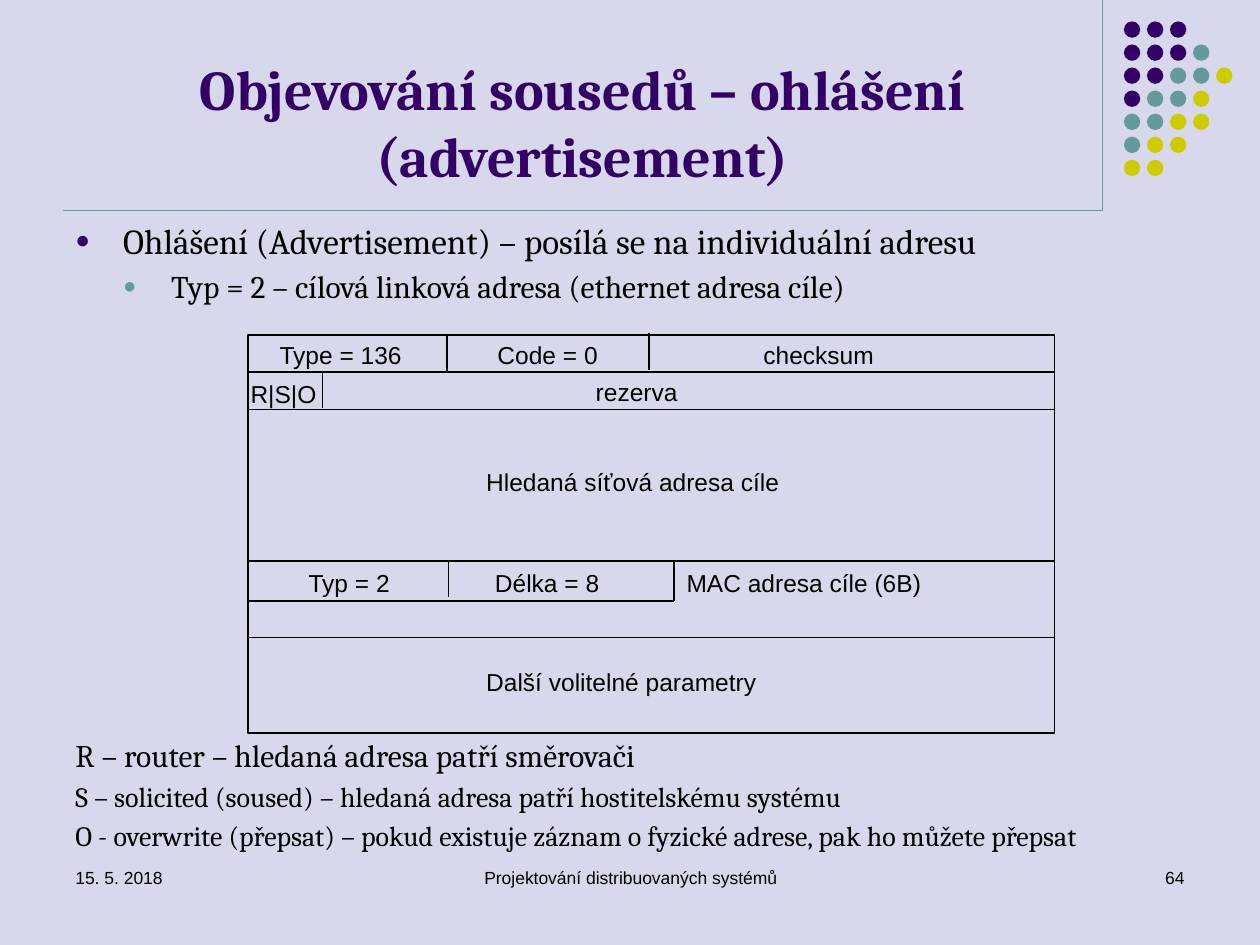
from typing import NamedTuple

from lxml.etree import SubElement
from pptx import Presentation
from pptx.dml.color import RGBColor
from pptx.enum.shapes import MSO_CONNECTOR, MSO_SHAPE
from pptx.enum.text import MSO_ANCHOR, PP_ALIGN
from pptx.oxml.ns import qn
from pptx.util import Inches, Pt

PURPLE, TEAL, YELLOW = "330066", "669999", "CCCC00"
BLACK, BACKGROUND = "000000", "D8D8EC"
LEFT, RIGHT, TOP, BOTTOM = 1.97, 8.37, 2.66, 5.82
DOT_ROWS = ("PPP", "PPPT", "PPTTY", "PTTY", "TTYY", "TYY", "YY")
DOT_COLORS = {"P": PURPLE, "T": TEAL, "Y": YELLOW}


class Para(NamedTuple):
    text: str
    size: int
    bullet: str = ""
    indent: float = 0


class Rule(NamedTuple):
    x1: float
    y1: float
    x2: float
    y2: float


class Field(NamedTuple):
    text: str
    x: float
    y: float
    w: float
    h: float


RULES = (
    Rule(LEFT, 2.95, RIGHT, 2.95),
    Rule(LEFT, 3.25, RIGHT, 3.25),
    Rule(LEFT, 4.45, RIGHT, 4.45),
    Rule(LEFT, 4.77, 5.35, 4.77),
    Rule(LEFT, 5.06, RIGHT, 5.06),
    Rule(3.55, TOP, 3.55, 2.96),
    Rule(5.15, 2.64, 5.15, 2.94),
    Rule(2.56, 2.95, 2.56, 3.24),
    Rule(3.56, 4.45, 3.56, 4.74),
    Rule(5.35, 4.45, 5.35, 4.77),
)
FIELDS = (
    Field("Type = 136", 2.12, 2.63, 1.41, 0.36),
    Field("Code = 0", 3.85, 2.63, 1.2, 0.36),
    Field("checksum", 5.96, 2.63, 1.32, 0.36),
    Field("R|S|O", 1.89, 2.94, 0.96, 0.35),
    Field("rezerva", 4.63, 2.93, 1.07, 0.37),
    Field("Hledaná síťová adresa cíle", 3.76, 3.64, 2.91, 0.31),
    Field("Typ = 2", 2.35, 4.44, 1.05, 0.45),
    Field("Délka = 8", 3.83, 4.44, 1.24, 0.45),
    Field("MAC adresa cíle (6B)", 5.35, 4.44, 2.38, 0.31),
    Field("Další volitelné parametry", 3.76, 5.23, 2.82, 0.38),
)
FOOTERS = (
    (Field("15. 5. 2018", 0.5, 6.83, 2.33, 0.5), PP_ALIGN.LEFT),
    (Field("Projektování distribuovaných systémů", 3.42, 6.83, 3.17, 0.5), PP_ALIGN.CENTER),
    (Field("64", 7.17, 6.83, 2.33, 0.5), PP_ALIGN.RIGHT),
)
INTRO = (
    Para("Ohlášení (Advertisement) – posílá se na individuální adresu", 20, PURPLE, 0.38),
    Para("Typ = 2 – cílová linková adresa (ethernet adresa cíle)", 18, TEAL, 0.76),
)
FLAGS = (
    Para("R – router – hledaná adresa patří směrovači", 18),
    Para("S – solicited (soused) – hledaná adresa patří hostitelskému systému", 16),
    Para("O - overwrite (přepsat) – pokud existuje záznam o fyzické adrese, pak ho můžete přepsat", 16),
)


def rgb(value: str) -> RGBColor:
    return RGBColor.from_string(value)


def add_textbox(s, x: float, y: float, w: float, h: float, anchor=MSO_ANCHOR.TOP):
    tf = s.shapes.add_textbox(Inches(x), Inches(y), Inches(w), Inches(h)).text_frame
    tf.word_wrap = True
    tf.vertical_anchor = anchor
    return tf


def write(p, text: str, *, size: int, font="Arial", color=BLACK, bold=False,
          align=PP_ALIGN.LEFT, before=0.0, after=0.0, spacing=1.0) -> None:
    p.alignment = align
    p.space_before, p.space_after = Pt(before), Pt(after)
    p.line_spacing = spacing
    r = p.add_run()
    r.text = text
    r.font.size, r.font.name, r.font.bold = Pt(size), font, bold
    r.font.color.rgb = rgb(color)


def add_bullet(p, color: str, indent: float) -> None:
    pPr = p._p.get_or_add_pPr()
    pPr.set("marL", str(Inches(indent)))
    pPr.set("indent", str(-Inches(0.38)))
    SubElement(SubElement(pPr, qn("a:buClr")), qn("a:srgbClr"), val=color)
    SubElement(pPr, qn("a:buSzPct"), val="70000")
    SubElement(pPr, qn("a:buFont"), typeface="Arial")
    SubElement(pPr, qn("a:buChar"), char="●")


def add_paragraphs(s, y: float, paras: tuple[Para, ...]) -> None:
    tf = add_textbox(s, 0.5, y, 9, 1)
    for i, para in enumerate(paras):
        p = tf.add_paragraph() if i else tf.paragraphs[0]
        write(p, para.text, size=para.size, font="Cambria", before=para.size * 0.2)
        if para.bullet:
            add_bullet(p, para.bullet, para.indent)


def add_rule(s, rule: Rule, color=BLACK, width=1.0) -> None:
    line = s.shapes.add_connector(MSO_CONNECTOR.STRAIGHT, *map(Inches, rule))
    line.line.color.rgb = rgb(color)
    line.line.width = Pt(width)
    SubElement(line._element.spPr, qn("a:effectLst"))


def add_field(s, field: Field, **fmt) -> None:
    tf = add_textbox(s, *field[1:])
    write(tf.paragraphs[0], field.text, **fmt)


def add_dots(s) -> None:
    for row, codes in enumerate(DOT_ROWS):
        for col, code in enumerate(codes):
            dot = s.shapes.add_shape(
                MSO_SHAPE.OVAL, Inches(8.92 + col * 0.183), Inches(0.17 + row * 0.183),
                Inches(0.13), Inches(0.13))
            dot.shadow.inherit = False
            dot.fill.solid()
            dot.fill.fore_color.rgb = rgb(DOT_COLORS[code])
            dot.line.fill.background()


def add_packet(s) -> None:
    frame = s.shapes.add_shape(MSO_SHAPE.RECTANGLE, Inches(LEFT), Inches(TOP),
                               Inches(RIGHT - LEFT), Inches(BOTTOM - TOP))
    frame.shadow.inherit = False
    frame.fill.background()
    frame.line.color.rgb = rgb(BLACK)
    frame.line.width = Pt(1)
    for rule in RULES:
        add_rule(s, rule)
    for field in FIELDS:
        add_field(s, field, size=14, spacing=1.07, after=8)


def main() -> None:
    prs = Presentation()
    prs.slide_width, prs.slide_height = Inches(10), Inches(7.5)
    s = prs.slides.add_slide(prs.slide_layouts[6])
    s.background.fill.solid()
    s.background.fill.fore_color.rgb = rgb(BACKGROUND)

    add_rule(s, Rule(8.75, 0, 8.75, 1.67), TEAL, 0.75)
    add_rule(s, Rule(0.5, 1.67, 8.75, 1.67), TEAL, 0.75)
    add_dots(s)
    title = add_textbox(s, 0.5, 0.13, 8.25, 1.42, MSO_ANCHOR.BOTTOM)
    write(title.paragraphs[0], "Objevování sousedů – ohlášení (advertisement)",
          size=32, font="Cambria", color=PURPLE, bold=True, align=PP_ALIGN.CENTER)
    add_paragraphs(s, 1.69, INTRO)
    add_packet(s)
    add_paragraphs(s, 5.79, FLAGS)
    for footer, align in FOOTERS:
        add_field(s, footer, size=10, align=align)
    prs.save("out.pptx")


if __name__ == "__main__":
    main()
